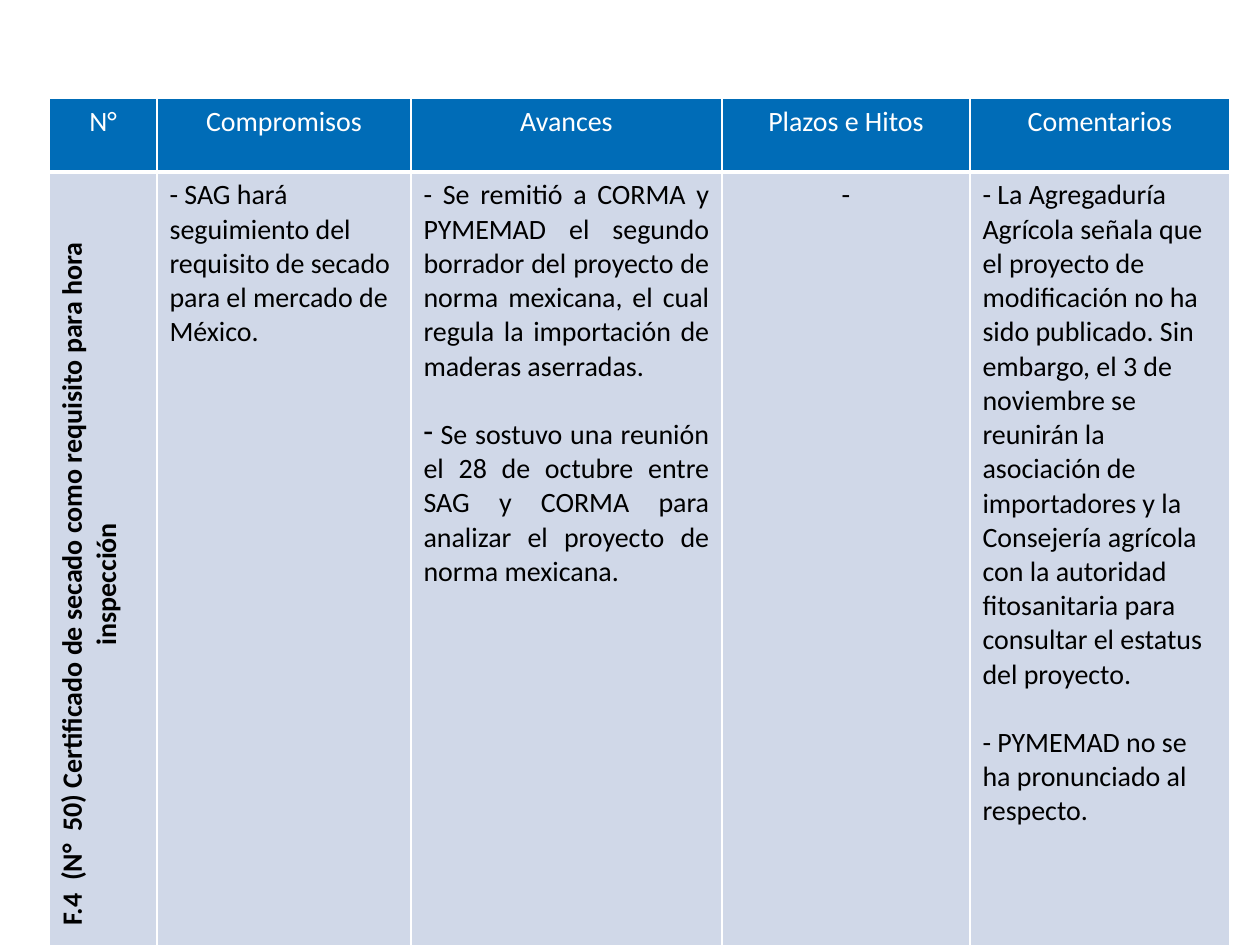
from lxml.etree import SubElement
from pptx import Presentation
from pptx.dml.color import RGBColor
from pptx.enum.text import PP_ALIGN
from pptx.oxml import parse_xml
from pptx.oxml.ns import nsdecls, qn
from pptx.util import Pt

EMU_PER_PX = 914400 / 126
COLUMN_WIDTHS = [108, 254, 311, 248, 260]
ROW_HEIGHTS = [74, 697]
HEADERS = ["N°", "Compromisos", "Avances", "Plazos e Hitos", "Comentarios"]
TOPIC = "F.4  (N°  50) Certificado de secado como requisito para hora inspección"
COMMITMENTS = ["- SAG hará seguimiento del requisito de secado para el mercado de México."]
PROGRESS = [
    "- Se remitió a CORMA y PYMEMAD el segundo borrador del proyecto de norma "
    "mexicana, el cual regula la importación de maderas aserradas.",
    " Se sostuvo una reunión el 28 de octubre entre SAG y CORMA para analizar "
    "el proyecto de norma mexicana.",
]
COMMENTS = [
    "- La Agregaduría Agrícola señala que el proyecto de modificación no ha sido "
    "publicado. Sin embargo, el 3 de noviembre se reunirán la asociación de "
    "importadores y la Consejería agrícola con la autoridad fitosanitaria para "
    "consultar el estatus del proyecto.",
    "- PYMEMAD no se ha pronunciado al respecto.",
]


def px(length):
    return round(length * EMU_PER_PX)


def color(hex_value):
    return RGBColor.from_string(hex_value)


def set_borders(cell, bottom_width):
    properties = cell._tc.get_or_add_tcPr()
    widths = {"lnL": 1, "lnR": 1, "lnT": 1, "lnB": bottom_width}
    for position, (side, width) in enumerate(widths.items()):
        border = parse_xml(
            f'<a:{side} {nsdecls("a")} w="{Pt(width)}"><a:solidFill>'
            f'<a:srgbClr val="FFFFFF"/></a:solidFill></a:{side}>'
        )
        properties.insert(position, border)


def add_dash_bullet(paragraph):
    properties = paragraph._p.get_or_add_pPr()
    properties.set("marL", "0")
    properties.set("indent", "0")
    SubElement(properties, qn("a:buFontTx"))
    SubElement(properties, qn("a:buChar")).set("char", "-")


def fill_cell(cell, texts, fill, font_color, alignment, bold=False, bottom_width=1):
    cell.fill.solid()
    cell.fill.fore_color.rgb = color(fill)
    set_borders(cell, bottom_width)
    frame = cell.text_frame
    for index, text in enumerate(texts):
        paragraph = frame.add_paragraph() if index else frame.paragraphs[0]
        paragraph.alignment = alignment
        if index:
            paragraph.space_before = Pt(19.5)
        run = paragraph.add_run()
        run.text = text
        run.font.name = "Calibri"
        run.font.size = Pt(16)
        run.font.bold = bold
        run.font.color.rgb = color(font_color)


def add_commitments_table(slide, left, top):
    shape = slide.shapes.add_table(
        len(ROW_HEIGHTS), len(COLUMN_WIDTHS), px(left), px(top),
        px(sum(COLUMN_WIDTHS)), px(sum(ROW_HEIGHTS)),
    )
    table = shape.table
    table.horz_banding = False
    for column, width in zip(table.columns, COLUMN_WIDTHS):
        column.width = px(width)
    for row, height in zip(table.rows, ROW_HEIGHTS):
        row.height = px(height)
    for index, header in enumerate(HEADERS):
        fill_cell(table.cell(0, index), [header], "006CB7", "FFFFFF",
                  PP_ALIGN.CENTER, bottom_width=3)
    body = [
        ([TOPIC], PP_ALIGN.CENTER),
        (COMMITMENTS, PP_ALIGN.LEFT),
        (PROGRESS, PP_ALIGN.JUSTIFY),
        (["-"], PP_ALIGN.CENTER),
        (COMMENTS, PP_ALIGN.LEFT),
    ]
    for index, (texts, alignment) in enumerate(body):
        fill_cell(table.cell(1, index), texts, "D0D8E8", "000000",
                  alignment, bold=index == 0)
    table.cell(1, 0)._tc.get_or_add_tcPr().set("vert", "vert270")
    add_dash_bullet(table.cell(1, 2).text_frame.paragraphs[1])


def main():
    presentation = Presentation()
    presentation.slide_width = px(1260)
    presentation.slide_height = px(945)
    slide = presentation.slides.add_slide(presentation.slide_layouts[6])
    add_commitments_table(slide, 49, 98)
    presentation.save("out.pptx")


if __name__ == "__main__":
    main()
